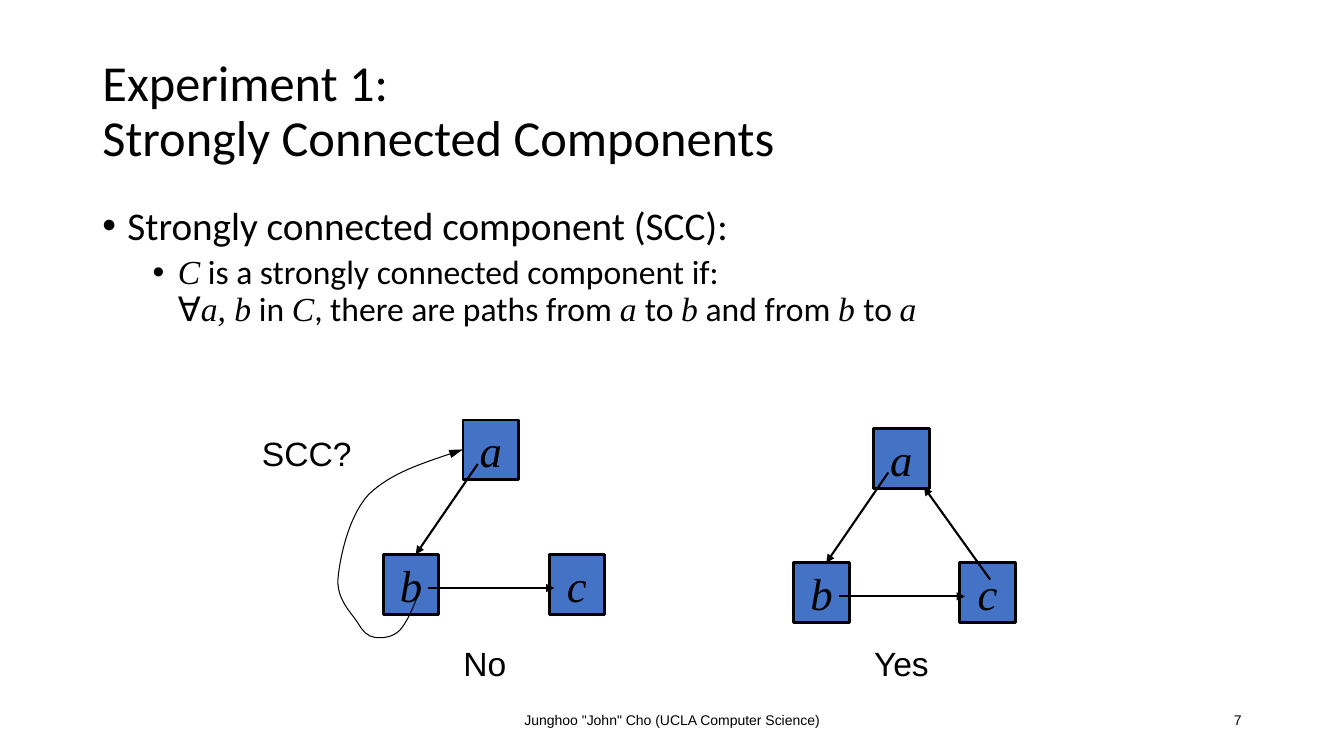
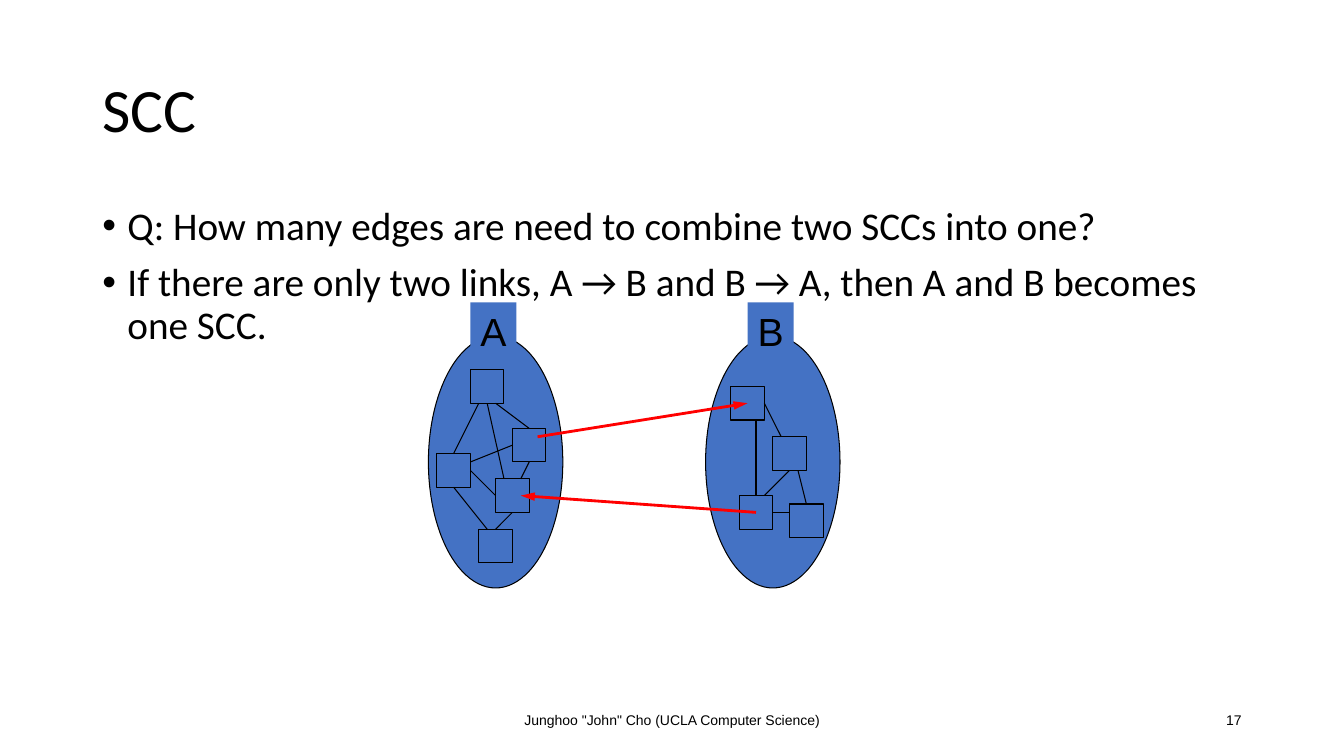
from lxml import etree
from pptx import Presentation
from pptx.dml.color import RGBColor
from pptx.enum.shapes import MSO_CONNECTOR as Connector, MSO_SHAPE as Shape
from pptx.enum.text import MSO_ANCHOR as Anchor, MSO_AUTO_SIZE as AutoSize, PP_ALIGN as Align
from pptx.oxml.ns import qn
from pptx.util import Pt

PX = 9525  # EMU per px, 96 px to the inch
BLACK, BLUE, RED = "000000", "4472C4", "FF0000"
SANS, BODY, MATH = "Arial", "Calibri", "Times New Roman"
TITLE_BOX = (88, 38, 1104, 139)
BODY_BOX = (88, 192, 1104, 457)
FOOTER_BOX = (424, 667, 432, 38)
NUMBER_BOX = (904, 667, 288, 38)
FOOTER = 'Junghoo "John" Cho (UCLA Computer Science)'
BULLET_STYLES = [(28, 10, 24), (24, 5, 72)]  # size, space before, indent by level


def emu(*lengths):
    return [length * PX for length in lengths]


def colour(value):
    return RGBColor.from_string(value)


def style(para, size, font=SANS, align=Align.LEFT, italic=False):
    para.alignment = align
    for span in para.runs:
        span.font.size, span.font.name, span.font.italic = Pt(size), font, italic
        span.font.color.rgb = colour(BLACK)


def place_text(page, box, text, size, align=Align.LEFT, anchor=Anchor.TOP, wrap=True):
    frame = page.shapes.add_textbox(*emu(*box)).text_frame
    frame.text = text
    frame.word_wrap, frame.vertical_anchor = wrap, anchor
    style(frame.paragraphs[0], size, align=align)


def place_shape(page, kind, box, line_width=0.75):
    shape = page.shapes.add_shape(kind, *emu(*box))
    shape.shadow.inherit = False
    shape.fill.solid()
    shape.fill.fore_color.rgb = colour(BLUE)
    if line_width:
        set_line(shape, line_width)
    else:
        shape.line.fill.background()
    return shape


def caption(shape, text, size, font, anchor, italic=False):
    frame = shape.text_frame
    frame.text = text
    frame.word_wrap, frame.vertical_anchor = False, anchor
    style(frame.paragraphs[0], size, font, Align.CENTER, italic)


def set_line(shape, width, line_colour=BLACK, arrow=None):
    """Format an outline; arrow is the length of its end arrowhead."""
    shape.line.width = Pt(width)
    shape.line.color.rgb = colour(line_colour)
    if arrow:
        etree.SubElement(shape.line._get_or_add_ln(), qn("a:tailEnd"),
                         type="triangle", w="med", len=arrow)


def side_middles(shape):
    left, top, width, height = shape.left, shape.top, shape.width, shape.height
    return [(left + width // 2, top), (left, top + height // 2),
            (left + width // 2, top + height), (left + width, top + height // 2)]


def connect(page, start, end, width=0.75, line_colour=BLACK, arrow=None, joins=()):
    """Draw a straight line, joined to any shape whose side middle it meets."""
    start, end = tuple(emu(*start)), tuple(emu(*end))
    line = page.shapes.add_connector(Connector.STRAIGHT, *start, *end)
    set_line(line, width, line_colour, arrow)
    etree.SubElement(line._element.spPr, qn("a:effectLst"))
    for shape in joins:
        for site, point in enumerate(side_middles(shape)):
            if point == start:
                line.begin_connect(shape, site)
            if point == end:
                line.end_connect(shape, site)


def place_curve(page, origin, points):
    """Draw an arrowed curve: a start, then three control points a segment."""
    builder = page.shapes.build_freeform(*points[0], scale=PX)
    builder.add_line_segments(points[1:], close=False)
    curve = builder.convert_to_shape(*emu(*origin))
    segments = list(curve._element.iter(qn("a:lnTo")))
    for first, second, third in zip(segments[::3], segments[1::3], segments[2::3]):
        first.tag = qn("a:cubicBezTo")
        for other in (second, third):
            first.append(other[0])
            other.getparent().remove(other)
    curve.shadow.inherit = False
    curve.fill.background()
    set_line(curve, 0.75, arrow="lg")


def add_page(deck, title, title_size, number):
    """Title and footer, common to all slides."""
    page = deck.slides.add_slide(deck.slide_layouts[5])
    heading = page.shapes.title
    heading.left, heading.top, heading.width, heading.height = emu(*TITLE_BOX)
    frame = heading.text_frame
    frame.text = title
    frame.auto_size, frame.vertical_anchor = AutoSize.NONE, Anchor.MIDDLE
    frame.paragraphs[0].line_spacing = 0.9
    style(frame.paragraphs[0], title_size, BODY)
    place_text(page, FOOTER_BOX, FOOTER, 10, Align.CENTER, Anchor.MIDDLE)
    place_text(page, NUMBER_BOX, number, 10, Align.RIGHT, Anchor.MIDDLE)
    return page


def place_bullets(page, box, items):
    """Bulleted (level, text) items; *text* between asterisks is maths."""
    frame = page.shapes.add_textbox(*emu(*box)).text_frame
    frame.word_wrap = True
    for index, (level, text) in enumerate(items):
        para = frame.add_paragraph() if index else frame.paragraphs[0]
        size, before, indent = BULLET_STYLES[level]
        for row, line in enumerate(text.split("\v")):
            if row:
                para.add_line_break()
            for part, words in enumerate(line.split("*")):
                if words:
                    span = para.add_run()
                    span.text = words
                    span.font.name = MATH if part % 2 else BODY
                    span.font.italic = bool(part % 2)
                    span.font.size = Pt(size)
                    span.font.color.rgb = colour(BLACK)
        para.level, para.line_spacing, para.space_before = level, 0.9, Pt(before)
        props = para._p.get_or_add_pPr()
        props.set("marL", str(indent * PX))
        props.set("indent", str(-24 * PX))
        etree.SubElement(props, qn("a:buFont"), typeface=SANS)
        etree.SubElement(props, qn("a:buChar"), char="•")


def place_graph(page, box, answer, answer_width, extra_edges=()):
    """Three lettered nodes with arrows, and the answer at the foot."""
    left, top, _, height = box
    for letter, x, y in [("b", 0, 128), ("c", 158, 128), ("a", 76, 0)]:
        node = place_shape(page, Shape.RECTANGLE, (left + x, top + y, 53, 57), 2)
        caption(node, letter, 32, MATH, Anchor.MIDDLE, italic=True)
    edges = [((43, 160), (163, 160)), ((90, 42), (31, 128)), *extra_edges]
    for (x1, y1), (x2, y2) in edges:
        connect(page, (left + x1, top + y1), (left + x2, top + y2), 1.5, arrow="med")
    place_text(page, (left + 67, top + height - 48, answer_width, 48), answer, 24, wrap=False)


def place_component(page, box, name, squares, edges):
    """An ellipse with its name, inner squares and the lines between them."""
    left, top, _, _ = box
    place_shape(page, Shape.OVAL, box)
    label = place_shape(page, Shape.RECTANGLE, (left + 40, top - 32, 44, 55), 0)
    caption(label, name, 28, SANS, Anchor.TOP)
    nodes = [place_shape(page, Shape.RECTANGLE, (left + x, top + y, 32, 32))
             for x, y in squares]
    for (x1, y1), (x2, y2) in edges:
        connect(page, (left + x1, top + y1), (left + x2, top + y2), joins=nodes)


def build_experiment(deck):
    page = add_page(deck, "Experiment 1:\vStrongly Connected Components", 36, "7")
    place_bullets(page, BODY_BOX, [
        (0, "Strongly connected component (SCC):"),
        (1, "*C* is a strongly connected component if:\v∀*a, b* in *C*, there are paths "
            "from *a *to *b* and from *b *to *a*"),
    ])
    # Left graph, with a return path from b to a
    place_graph(page, (365, 400, 211, 256), "No", 60)
    place_curve(page, (365, 400), [
        (34, 164),
        (29, 178), (23, 192), (16, 200),
        (9, 207), (0, 208), (-8, 207),
        (-15, 206), (-19, 202), (-25, 192),
        (-31, 183), (-45, 170), (-43, 150),
        (-41, 130), (-33, 92), (-14, 71),
        (7, 51), (41, 40), (76, 28),
    ])
    place_text(page, (240, 408, 106, 48), "SCC?", 24, wrap=False)
    # Right graph, closed by an edge from c to a
    place_graph(page, (756, 408, 211, 248), "Yes", 75, [((187, 144), (124, 56))])


def build_combination(deck):
    page = add_page(deck, "SCC", 44, "17")
    place_bullets(page, BODY_BOX, [
        (0, "Q: How many edges are need to combine two SCCs into one?"),
        (0, "If there are only two links, A → B and B → A, then A and B becomes one SCC."),
    ])
    place_component(
        page, (408, 320, 128, 240), "A",
        [(40, 32), (80, 88), (64, 136), (8, 112), (48, 184)],
        [((64, 64), (96, 88)), ((96, 120), (88, 136)), ((80, 168), (64, 184)),
         ((56, 184), (24, 144)), ((24, 112), (48, 64)), ((40, 120), (80, 104)),
         ((72, 136), (56, 64)), ((64, 152), (40, 128))])
    place_component(
        page, (672, 320, 128, 240), "B",
        [(24, 48), (64, 96), (32, 152), (80, 160)],
        [((48, 80), (48, 152)), ((56, 152), (80, 128)), ((88, 128), (96, 160)),
         ((80, 168), (64, 168)), ((72, 96), (56, 64))])
    # Links between the components
    for start, end in [((512, 416), (712, 384)), ((720, 488), (496, 472))]:
        connect(page, start, end, 2, RED, arrow="lg")


def main():
    deck = Presentation()
    deck.slide_width, deck.slide_height = emu(1280, 720)
    build_experiment(deck)
    build_combination(deck)
    deck.save("out.pptx")


if __name__ == "__main__":
    main()
